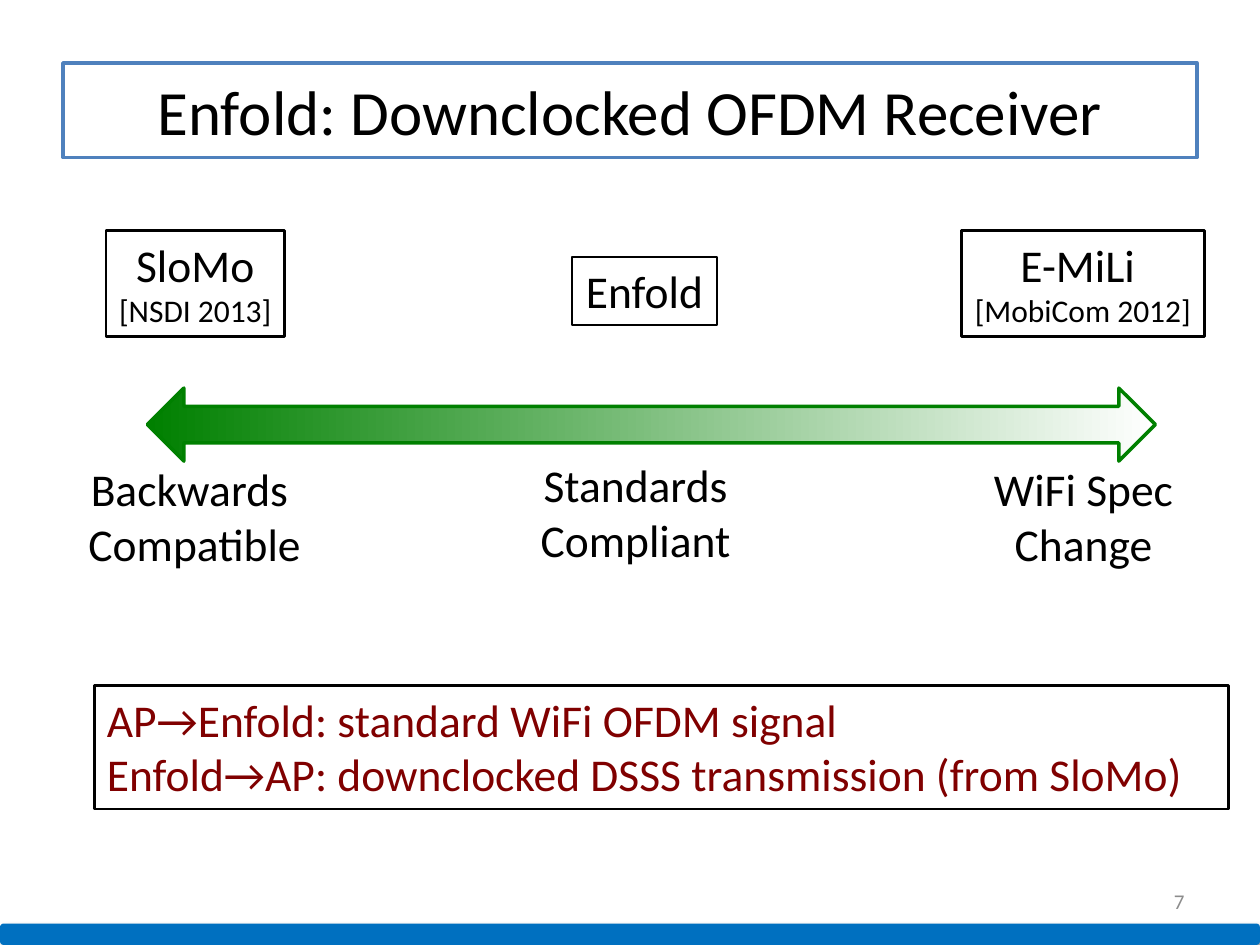
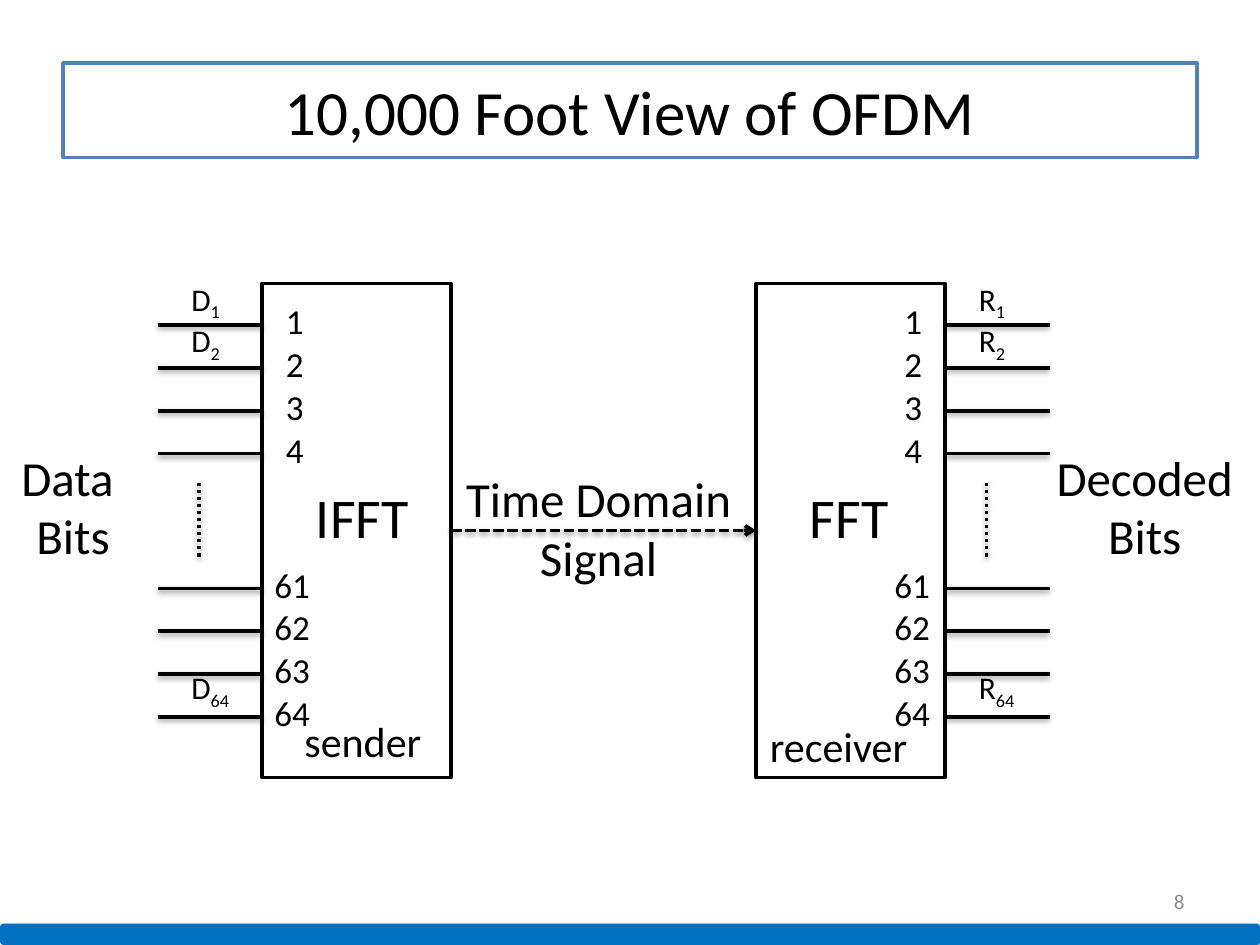
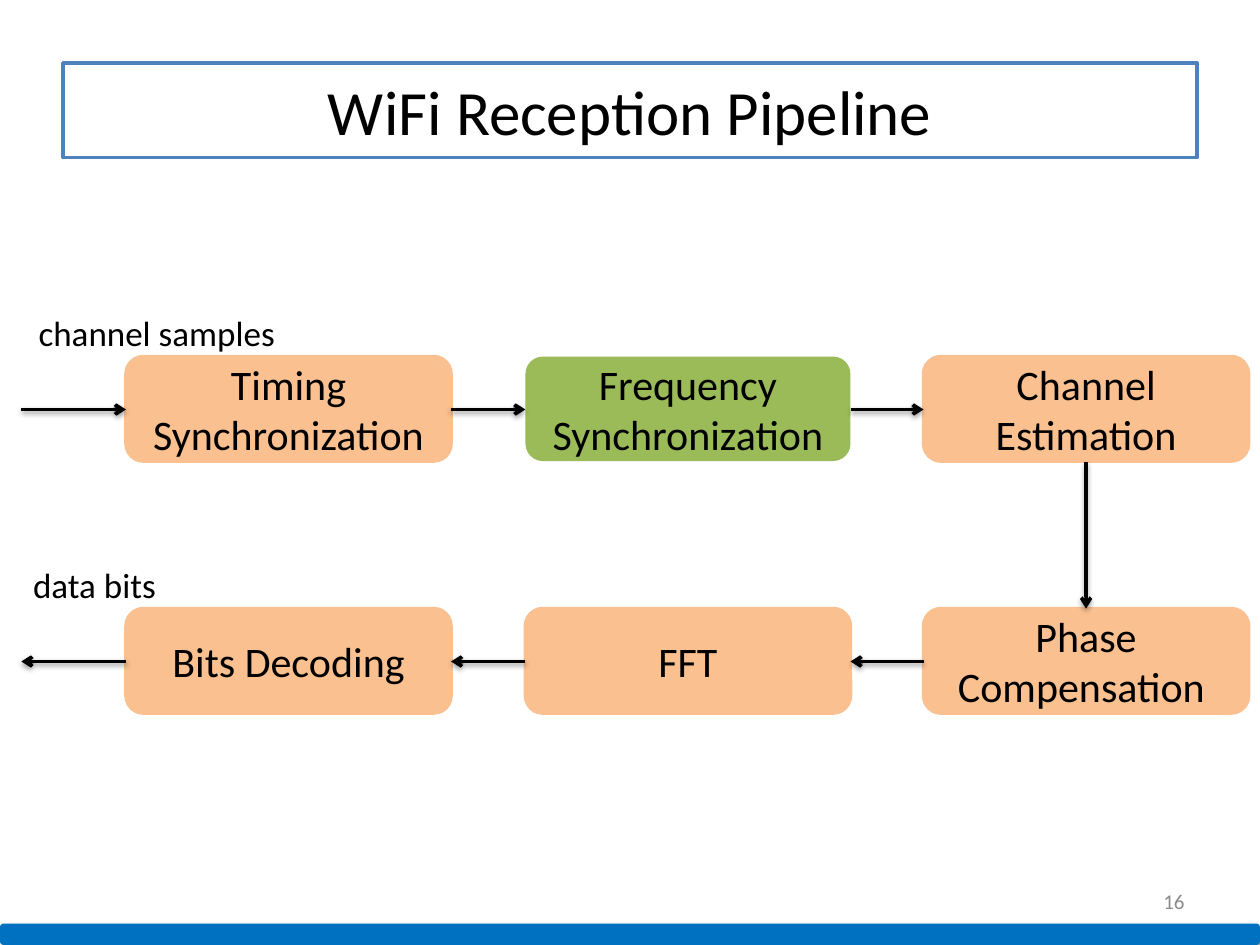
"""Build three slides on downclocked WiFi reception."""
from dataclasses import dataclass
from typing import NamedTuple, Optional

from lxml.etree import SubElement
from pptx import Presentation
from pptx.dml.color import RGBColor
from pptx.enum.dml import MSO_LINE
from pptx.enum.shapes import MSO_CONNECTOR, MSO_SHAPE
from pptx.enum.text import MSO_ANCHOR, MSO_AUTO_SIZE, PP_ALIGN
from pptx.oxml.ns import qn
from pptx.util import Inches, Pt

RECT, ROUND, ARROW = MSO_SHAPE.RECTANGLE, MSO_SHAPE.ROUNDED_RECTANGLE, MSO_SHAPE.LEFT_RIGHT_ARROW
LEFT, MID, RIGHT = PP_ALIGN.LEFT, PP_ALIGN.CENTER, PP_ALIGN.RIGHT
TOP, CENTER = MSO_ANCHOR.TOP, MSO_ANCHOR.MIDDLE
GROW, FIXED = MSO_AUTO_SIZE.SHAPE_TO_FIT_TEXT, MSO_AUTO_SIZE.NONE
DOT, DASH = MSO_LINE.ROUND_DOT, MSO_LINE.SQUARE_DOT
STRAIGHT = MSO_CONNECTOR.STRAIGHT
FONT = "Calibri"
COLORS = {
    "ink": "000000", "paper": "FFFFFF", "frame": "4F81BD", "band": "0070C0",
    "gray": "8C8C8C", "green": "008000", "maroon": "800000",
    "peach": "FAC090", "leaf": "9BBB59",
}


class Run(NamedTuple):
    """One run of text."""
    text: str
    size: float
    sub: bool = False


class Shade(NamedTuple):
    """A drop shadow: alpha in percent, blur and gap in points, angle in degrees."""
    alpha: int
    blur: float
    gap: float
    angle: int


@dataclass(frozen=True)
class Block:
    """A text box, or a shape with text when a kind is given."""
    x: float
    y: float
    w: float
    h: float
    rows: tuple[tuple[Run, ...], ...] = ()
    align: PP_ALIGN = MID
    anchor: MSO_ANCHOR = TOP
    wrap: bool = True
    grow: bool = True
    color: str = "ink"
    kind: Optional[MSO_SHAPE] = None
    fill: str = ""
    edge: str = ""
    weight: float = 2


@dataclass(frozen=True)
class Wire:
    """A straight line with an optional dash and arrow."""
    x: float
    y: float
    to_x: float
    to_y: float
    dash: Optional[MSO_LINE] = None
    arrow: bool = False


@dataclass(frozen=True)
class Side:
    """One end of the link: its box, ports and labels."""
    box: float
    port: float
    small: float
    large: float
    mark: str
    mark_x: float
    dots: float
    name: str
    name_x: float


LINE_SHADE = Shade(38, 3.1, 1.6, 90)
BAND_SHADE = Shade(40, 4, 3, 45)


def paint(name: str) -> RGBColor:
    """Look up a colour."""
    return RGBColor.from_string(COLORS[name])


def lines(size: float, *texts: str) -> tuple[tuple[Run, ...], ...]:
    """Make one single-run paragraph per text."""
    return tuple((Run(text, size),) for text in texts)


def cast(shape, shade: Shade) -> None:
    """Give a shape a drop shadow."""
    effect = SubElement(shape._element.spPr, qn("a:effectLst"))
    outer = SubElement(effect, qn("a:outerShdw"), blurRad=str(Pt(shade.blur)), dist=str(Pt(shade.gap)),
                       dir=str(shade.angle * 60000), rotWithShape="0")
    color = SubElement(outer, qn("a:srgbClr"), val=COLORS["ink"])
    SubElement(color, qn("a:alpha"), val=str(shade.alpha * 1000))


def write(shape, block: Block) -> None:
    """Fill a shape with the text of its block."""
    frame = shape.text_frame
    frame.word_wrap = block.wrap
    frame.auto_size = GROW if block.grow else FIXED
    frame.vertical_anchor = block.anchor
    for i, row in enumerate(block.rows):
        para = frame.add_paragraph() if i else frame.paragraphs[0]
        para.alignment = block.align
        for part in row:
            run = para.add_run()
            run.text = part.text
            run.font.name = FONT
            run.font.size = Pt(part.size)
            run.font.color.rgb = paint(block.color)
            if part.sub:
                run._r.get_or_add_rPr().set("baseline", "-25000")


def draw(slide, block: Block, shade: Optional[Shade] = None):
    """Draw a block and return its shape."""
    place = [Inches(n) for n in (block.x, block.y, block.w, block.h)]
    if block.kind is None:
        shape = slide.shapes.add_textbox(*place)
    else:
        shape = slide.shapes.add_shape(block.kind, *place)
        if block.fill:
            shape.fill.solid()
            shape.fill.fore_color.rgb = paint(block.fill)
        else:
            shape.fill.background()
        if block.edge:
            shape.line.color.rgb = paint(block.edge)
            shape.line.width = Pt(block.weight)
        else:
            shape.line.fill.background()
        if shade:
            cast(shape, shade)
        else:
            shape.shadow.inherit = False
    if block.rows:
        write(shape, block)
    return shape


def link(slide, wire: Wire) -> None:
    """Draw a shadowed black line."""
    ends = [Inches(n) for n in (wire.x, wire.y, wire.to_x, wire.to_y)]
    shape = slide.shapes.add_connector(STRAIGHT, *ends)
    shape.line.color.rgb = paint("ink")
    shape.line.width = Pt(2)
    if wire.dash is not None:
        shape.line.dash_style = wire.dash
    if wire.arrow:
        SubElement(shape.line._get_or_add_ln(), qn("a:tailEnd"), type="arrow")
    cast(shape, LINE_SHADE)


def start(deck, title: str, page: int):
    """Add a slide with its title, band and page number."""
    slide = deck.slides.add_slide(deck.slide_layouts[6])
    draw(slide, Block(0.5, 0.5, 9, 0.75, lines(36, title), anchor=CENTER, grow=False,
                      kind=RECT, edge="frame"))
    draw(slide, Block(0, 7.33, 10, 0.17, kind=ROUND, fill="band"), BAND_SHADE)
    draw(slide, Block(7.17, 6.95, 2.33, 0.4, lines(12, str(page)), align=RIGHT,
                      anchor=CENTER, grow=False, color="gray"))
    return slide


def range_slide(deck) -> None:
    """Place the receivers on the scale of change."""
    slide = start(deck, "Enfold: Downclocked OFDM Receiver", 7)
    scale = draw(slide, Block(1.17, 3.08, 8, 0.58, kind=ARROW, edge="green"))
    scale.fill.gradient()
    scale.fill.gradient_angle = 0
    for stop, name in zip(scale.fill.gradient_stops, ("green", "paper")):
        stop.color.rgb = paint(name)
    for x, y, w, texts in (
        (0.59, 3.61, 1.91, ("Backwards ", "Compatible")),
        (4.18, 3.58, 1.73, ("Standards ", "Compliant")),
        (7.78, 3.61, 1.64, ("WiFi Spec", "Change")),
    ):
        draw(slide, Block(x, y, w, 0.98, lines(26, *texts), wrap=False))
    for x, y, w, h, name, venue in (
        (7.63, 1.83, 1.93, 0.84, "E-MiLi ", "[MobiCom 2012]"),
        (4.54, 2.04, 1.15, 0.54, "Enfold", ""),
        (0.84, 1.83, 1.42, 0.84, "SloMo", "[NSDI 2013]"),
    ):
        rows = lines(26, name) + (lines(18, venue) if venue else ())
        draw(slide, Block(x, y, w, h, rows, wrap=False, kind=RECT, edge="ink", weight=1.5))
    draw(slide, Block(0.75, 5.44, 9, 0.98, lines(
        26, "AP→Enfold: standard WiFi OFDM signal",
        "Enfold→AP: downclocked DSSS transmission (from SloMo)"),
        align=LEFT, color="maroon", kind=RECT, fill="paper", edge="ink", weight=1.5))


def draw_side(slide, side: Side) -> None:
    """Draw one transform box with its ports."""
    draw(slide, Block(side.box, 2.25, 1.5, 3.92, kind=RECT, edge="ink"))
    draw(slide, Block(side.box + 0.33, 3.78, 1, 0.64, lines(32, side.name), align=LEFT))
    for first, top, x, w in ((1, 2.58, side.small, 0.33), (61, 4.67, side.large, 0.58)):
        for i in range(4):
            y = top + 0.34 * i
            link(slide, Wire(side.port, y, side.port + 0.83, y))
            draw(slide, Block(x, y - 0.25, w, 0.44, lines(20, str(first + i)), align=LEFT))
    link(slide, Wire(side.dots, 3.83, side.dots, 4.42, DOT))
    for y, index in ((2.17, "1"), (2.5, "2"), (5.25, "64")):
        row = (Run(side.mark, 18), Run(index, 18, True))
        draw(slide, Block(side.mark_x, y, 0.67, 0.4, (row,), align=LEFT))


def view_slide(deck) -> None:
    """Show the sender and receiver transforms."""
    slide = start(deck, "10,000 Foot View of OFDM", 8)
    for side in (
        Side(2.08, 1.25, 2.17, 2.08, "D", 1.42, 1.58, "IFFT", 2.42),
        Side(6, 7.5, 7.08, 7, "R", 7.67, 7.83, "FFT", 6.33),
    ):
        draw_side(slide, side)
    link(slide, Wire(3.58, 4.21, 6, 4.21, DASH, True))
    for x, y, w, texts in (
        (-0.17, 3.5, 1.5, ("Data ", "Bits")),
        (3.25, 3.67, 3, ("Time Domain", "Signal")),
        (8.25, 3.5, 1.67, ("Decoded ", "Bits")),
    ):
        draw(slide, Block(x, y, w, 1.04, lines(28, *texts)))
    for x, y, w, text in ((2.31, 5.63, 1.14, "sender"), (6, 5.67, 1.31, "receiver")):
        draw(slide, Block(x, y, w, 0.5, lines(24, text), wrap=False))


def pipe_slide(deck) -> None:
    """Show the steps of reception."""
    slide = start(deck, "WiFi Reception Pipeline", 16)
    lefts, wide, high = (1, 4.17, 7.33), 2.58, 0.83
    for y, steps in (
        (2.83, ("Timing Synchronization", "Frequency Synchronization", "Channel Estimation")),
        (4.83, ("Bits Decoding", "FFT", "Phase Compensation ")),
    ):
        for x, step in zip(lefts, steps):
            focus = step.startswith("Frequency")
            draw(slide, Block(x, y, wide, high, lines(24, step), anchor=CENTER, grow=False,
                              kind=ROUND, fill="leaf" if focus else "peach",
                              edge="" if focus else "peach"))
    for a, b in zip((0.17, *(x + wide for x in lefts)), lefts):
        link(slide, Wire(a, 3.25, b, 3.25, arrow=True))
        link(slide, Wire(b, 5.25, a, 5.25, arrow=True))
    link(slide, Wire(8.62, 3.67, 8.62, 4.83, arrow=True))
    draw(slide, Block(0.08, 2.42, 2.33, 0.44, lines(20, "channel samples")))
    draw(slide, Block(-0.25, 4.42, 2, 0.44, lines(20, "data bits")))


def main() -> None:
    """Build and save the deck."""
    deck = Presentation()
    deck.slide_width, deck.slide_height = Inches(10), Inches(7.5)
    for build in (range_slide, view_slide, pipe_slide):
        build(deck)
    deck.save("out.pptx")


if __name__ == "__main__":
    main()
